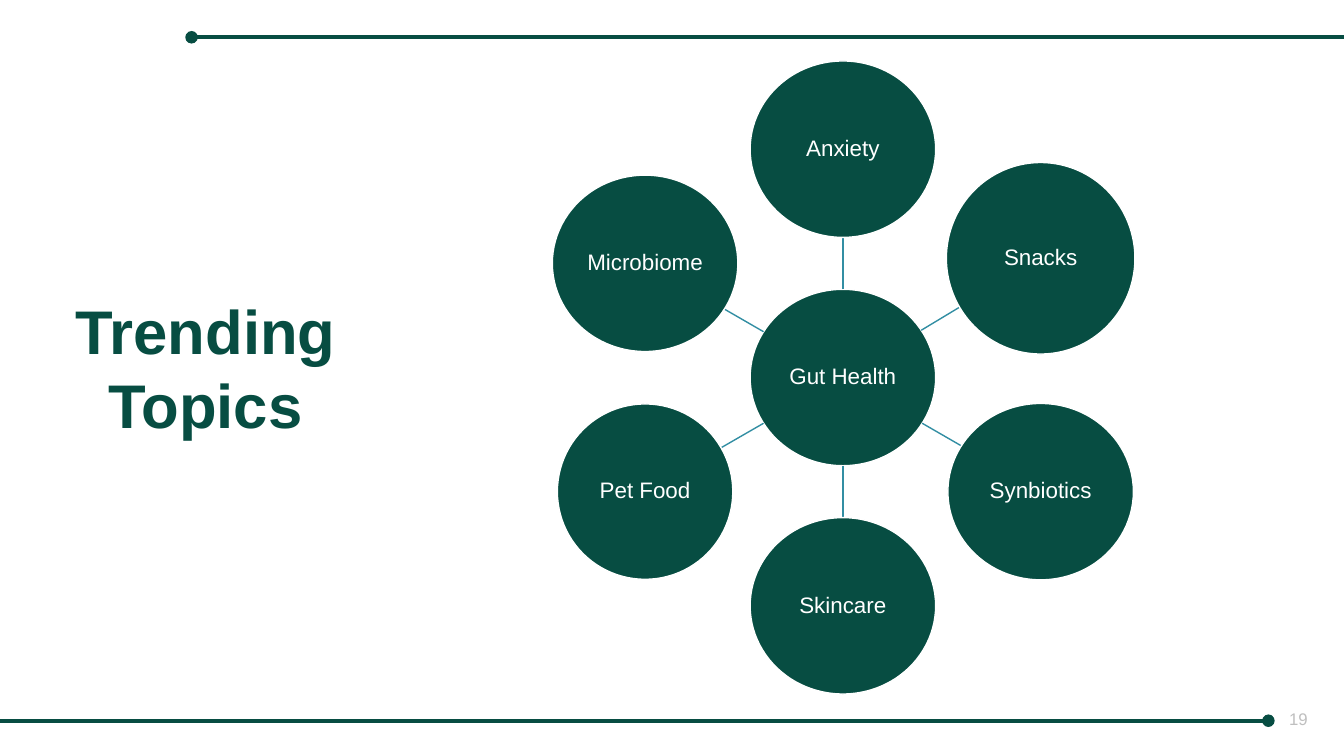
import math

from lxml import etree
from pptx import Presentation, util as u
from pptx.dml.color import RGBColor
from pptx.enum import shapes, text
from pptx.oxml import ns

Inches = u.Inches
COLORS = {"green": "074D42", "teal": "328EA3", "white": "FFFFFF", "grey": "BFBFBF"}
FONT = "Arial"

# Wheel geometry, in inches
HUB_X, HUB_Y = 8.36, 3.745
REACH = 2.265
BUBBLE = (1.84, 1.75)

# Label, width, height, vertical shift; clockwise from the top
TOPICS = [
    ("Anxiety", *BUBBLE, 0),
    ("Snacks", 1.87, 1.9, -0.05),
    ("Synbiotics", *BUBBLE, 0),
    ("Skincare", *BUBBLE, 0),
    ("Pet Food", 1.74, 1.74, 0),
    ("Microbiome", *BUBBLE, 0),
]


def rgb(name):
    return RGBColor.from_string(COLORS[name])


def add_run(paragraph, words, size, color, bold=False):
    run = paragraph.add_run()
    run.text = words
    run.font.name = FONT
    run.font.size = u.Pt(size)
    run.font.bold = bold
    run.font.color.rgb = rgb(color)


def add_line(slide, start, end, color, width, dot=False):
    line = slide.shapes.add_connector(
        shapes.MSO_CONNECTOR.STRAIGHT, *map(Inches, (*start, *end)))
    line.line.color.rgb = rgb(color)
    line.line.width = u.Pt(width)
    if dot:
        etree.SubElement(line.line._get_or_add_ln(), ns.qn("a:headEnd"), type="oval")
    etree.SubElement(line._element.spPr, ns.qn("a:effectLst"))


def add_bubble(slide, label, center_x, center_y, width, height):
    bubble = slide.shapes.add_shape(
        shapes.MSO_SHAPE.OVAL, Inches(center_x - width / 2),
        Inches(center_y - height / 2), Inches(width), Inches(height))
    bubble.shadow.inherit = False
    bubble.fill.solid()
    bubble.fill.fore_color.rgb = rgb("green")
    bubble.line.color.rgb = rgb("white")
    bubble.line.width = u.Pt(1)
    frame = bubble.text_frame
    frame.word_wrap = True
    frame.vertical_anchor = text.MSO_ANCHOR.MIDDLE
    frame.margin_left = frame.margin_right = Inches(0.01)
    frame.margin_top = frame.margin_bottom = Inches(0.01)
    paragraph = frame.paragraphs[0]
    paragraph.alignment = text.PP_ALIGN.CENTER
    paragraph.line_spacing = 0.9
    add_run(paragraph, label, 16, "white")


def ellipse_radius(width, height, angle):
    """Distance from an ellipse's center to its edge at an angle."""
    return 1 / math.hypot(math.cos(angle) * 2 / width, math.sin(angle) * 2 / height)


def add_spoke(slide, center_x, center_y, width, height):
    across, down = center_x - HUB_X, center_y - HUB_Y
    angle = math.atan2(down, across)
    inner = ellipse_radius(*BUBBLE, angle)
    outer = math.hypot(across, down) - ellipse_radius(width, height, angle)
    start, end = [(HUB_X + distance * math.cos(angle), HUB_Y + distance * math.sin(angle))
                  for distance in (inner, outer)]
    add_line(slide, start, end, "teal", 1)


def add_wheel(slide):
    add_bubble(slide, "Gut Health", HUB_X, HUB_Y, *BUBBLE)
    for index, (label, width, height, shift) in enumerate(TOPICS):
        angle = math.radians(60 * index - 90)
        center_x = HUB_X + REACH * math.cos(angle)
        center_y = HUB_Y + REACH * math.sin(angle) + shift
        add_spoke(slide, center_x, center_y, width, height)
        add_bubble(slide, label, center_x, center_y, width, height)


def set_title(slide, words):
    title = slide.shapes.title
    title.left, title.top = Inches(0.61), Inches(2.86)
    title.width, title.height = Inches(2.86), Inches(1.58)
    frame = title.text_frame
    frame.word_wrap = True
    frame.auto_size = text.MSO_AUTO_SIZE.NONE
    frame.vertical_anchor = text.MSO_ANCHOR.TOP
    paragraph = frame.paragraphs[0]
    paragraph.alignment = text.PP_ALIGN.CENTER
    add_run(paragraph, words, 44, "green", bold=True)


def add_page_number(slide, number):
    box = slide.shapes.add_textbox(*map(Inches, (12.66, 6.98, 0.41, 0.3)))
    box.text_frame.word_wrap = False
    paragraph = box.text_frame.paragraphs[0]
    paragraph.alignment = text.PP_ALIGN.RIGHT
    add_run(paragraph, number, 12, "grey")


def main():
    presentation = Presentation()
    presentation.slide_width = Inches(13.33)
    presentation.slide_height = Inches(7.5)
    slide = presentation.slides.add_slide(presentation.slide_layouts[5])

    # Frame lines and page number
    add_line(slide, (1.9, 0.37), (13.33, 0.37), "green", 3, dot=True)
    add_line(slide, (12.58, 7.15), (0, 7.15), "green", 3, dot=True)
    add_page_number(slide, "19")

    # Title and topic wheel
    set_title(slide, "Trending Topics")
    add_wheel(slide)

    presentation.save("out.pptx")


if __name__ == "__main__":
    main()
